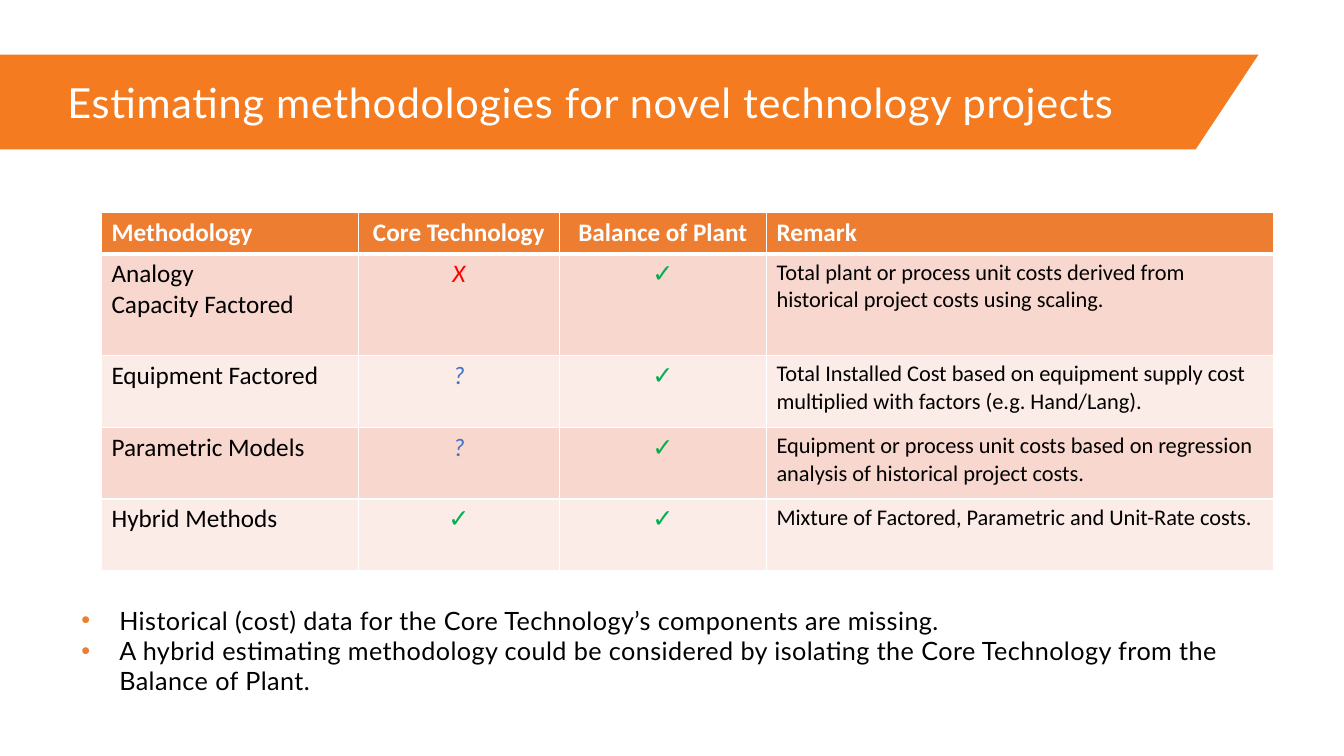
from lxml import etree
from pptx import Presentation
from pptx.dml.color import RGBColor
from pptx.enum import text
from pptx.oxml import parse_xml
from pptx.oxml.ns import nsdecls
from pptx.util import Pt

BANNER = RGBColor(0xF4, 0x7B, 0x20)
ORANGE = RGBColor(0xED, 0x7D, 0x31)
ROW_DARK = RGBColor(0xF8, 0xD7, 0xCE)
ROW_LIGHT = RGBColor(0xFC, 0xEC, 0xE8)
WHITE = RGBColor(0xFF, 0xFF, 0xFF)
BLACK = RGBColor(0, 0, 0)
RED = RGBColor(0xFF, 0, 0)
GREEN = RGBColor(0, 0xB0, 0x50)
BLUE = RGBColor(0x44, 0x72, 0xC4)
LEFT, CENTER = text.PP_ALIGN.LEFT, text.PP_ALIGN.CENTER


def write(tf, content, size=18, font="Calibri", color=BLACK, bold=False,
          italic=False, align=LEFT, spacing=0):
    """Fill a text frame, one paragraph per line; spacing is in 1/100 pt."""
    tf.text = content
    for p in tf.paragraphs:
        p.alignment = align
        p.space_before = Pt(0)
        for r in p.runs:
            r.font.size, r.font.name = Pt(size), font
            r.font.bold, r.font.italic = bold, italic
            r.font.color.rgb = color
            if spacing:
                r._r.get_or_add_rPr().set("spc", str(spacing))


def set_borders(cell, bottom):
    """Draw white cell edges, 1 pt wide except for the bottom one."""
    tcPr = cell._tc.get_or_add_tcPr()
    for i, (edge, width) in enumerate(dict(L=1, R=1, T=1, B=bottom).items()):
        tcPr.insert(i, parse_xml(
            f'<a:ln{edge} {nsdecls("a")} w="{Pt(width)}"><a:solidFill>'
            f'<a:srgbClr val="{WHITE}"/></a:solidFill></a:ln{edge}>'))


prs = Presentation()
prs.slide_width, prs.slide_height = Pt(960), Pt(540)
s = prs.slides.add_slide(prs.slide_layouts[1])
title, body = s.placeholders

# Title on its slanted banner
fb = s.shapes.build_freeform(Pt(-2), Pt(39))
fb.add_line_segments([(Pt(899), Pt(39)), (Pt(854), Pt(106.8)), (Pt(-2), Pt(106.8))])
banner = fb.convert_to_shape()
banner.fill.solid()
banner.fill.fore_color.rgb = BANNER
banner.line.fill.background()
banner.shadow.inherit = False
title._element.addprevious(banner._element)

title.left, title.top, title.width, title.height = Pt(41), Pt(39), Pt(810), Pt(68)
tf = title.text_frame
write(tf, "Estimating methodologies for novel technology projects",
      size=29.6, font="Lato", color=WHITE, spacing=50)
tf.vertical_anchor = text.MSO_ANCHOR.MIDDLE
tf.auto_size = text.MSO_AUTO_SIZE.NONE

# Methodology table
MARK_COLORS = {"X": RED, "?": BLUE, "✓": GREEN}
ROWS = [
    ("Methodology", "Core Technology", "Balance of Plant", "Remark"),
    ("Analogy\nCapacity Factored", "X", "✓",
     "Total plant or process unit costs derived from historical project costs using scaling."),
    ("Equipment Factored", "?", "✓",
     "Total Installed Cost based on equipment supply cost multiplied with factors (e.g. Hand/Lang)."),
    ("Parametric Models", "?", "✓",
     "Equipment or process unit costs based on regression analysis of historical project costs."),
    ("Hybrid Methods", "✓", "✓",
     "Mixture of Factored, Parametric and Unit-Rate costs."),
]
COL_WIDTHS = [183.5, 143.5, 148, 362]
ROW_HEIGHTS = [29.2, 72.8, 51.2, 51.2, 51.2]

table = s.shapes.add_table(len(ROWS), len(COL_WIDTHS), Pt(72.5), Pt(152),
                           Pt(sum(COL_WIDTHS)), Pt(sum(ROW_HEIGHTS))).table
for col, width in zip(table.columns, COL_WIDTHS):
    col.width = Pt(width)
for i, row in enumerate(ROWS):
    table.rows[i].height = Pt(ROW_HEIGHTS[i])
    header = i == 0
    for j, content in enumerate(row):
        cell = table.cell(i, j)
        write(cell.text_frame, content,
              size=16 if j == 3 and not header else 18,
              color=WHITE if header else MARK_COLORS.get(content, BLACK),
              bold=header, italic=content in ("X", "?"),
              align=CENTER if j in (1, 2) else LEFT)
        cell.fill.solid()
        cell.fill.fore_color.rgb = ORANGE if header else ROW_DARK if i % 2 else ROW_LIGHT
        set_borders(cell, bottom=3 if header else 1)

# Conclusions
body.left, body.top, body.width, body.height = Pt(51), Pt(428.5), Pt(882), Pt(91)
tf = body.text_frame
write(tf, "Historical (cost) data for the Core Technology’s components are missing.\n"
      "A hybrid estimating methodology could be considered by isolating the "
      "Core Technology from the Balance of Plant.", font="Lato", spacing=30)
tf.auto_size = text.MSO_AUTO_SIZE.NONE
for p in tf.paragraphs:
    pPr = p._p.get_or_add_pPr()
    pPr.set("marL", str(Pt(27)))
    pPr.set("indent", str(Pt(-27)))
    pPr.append(parse_xml(f'<a:buClr {nsdecls("a")}><a:srgbClr val="{ORANGE}"/></a:buClr>'))
    etree.SubElement(pPr, pPr[-1].tag.replace("buClr", "buChar"), char="•")

prs.save("out.pptx")
